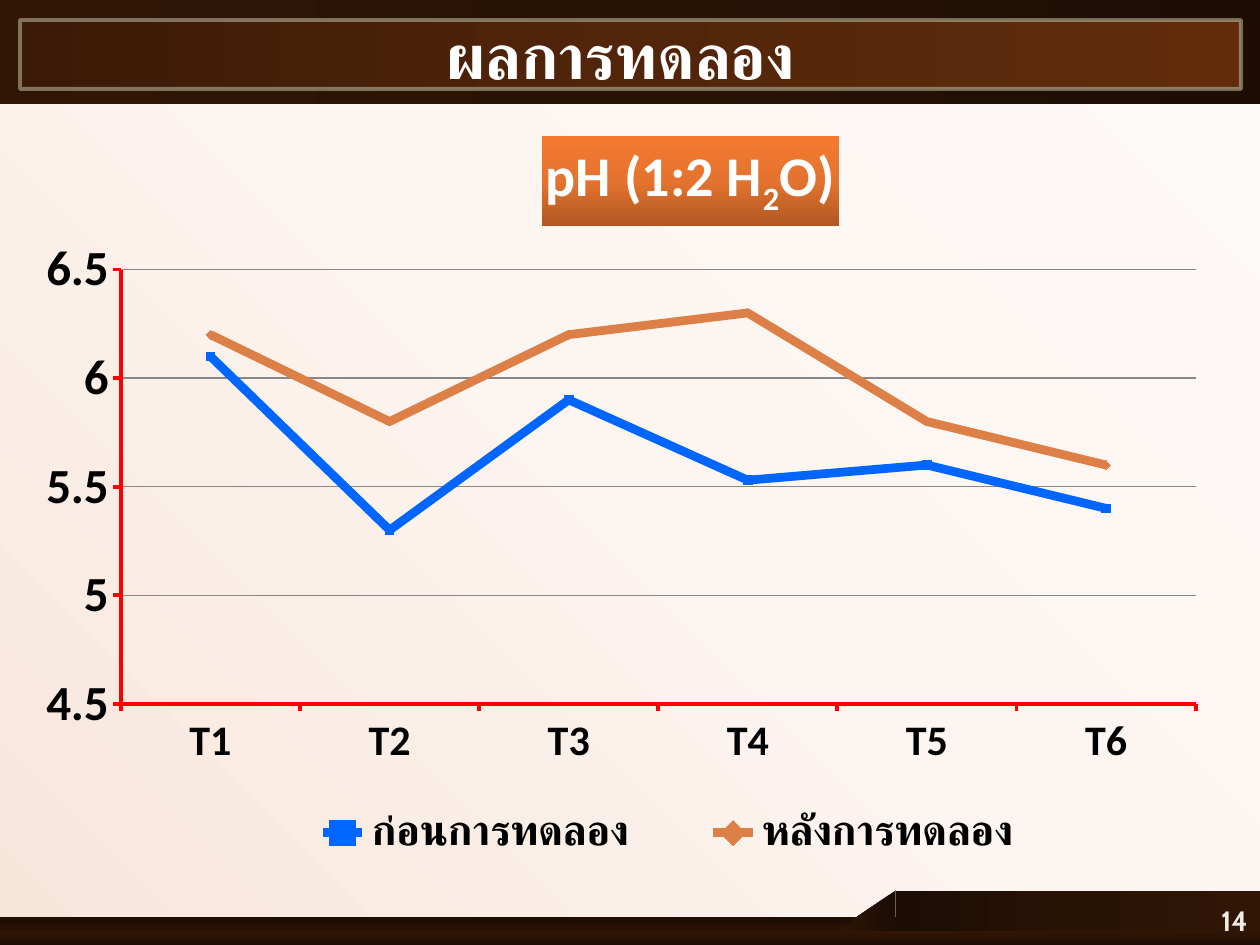
"""Builds the pH results slide with its line chart."""
from dataclasses import dataclass
from typing import Optional

from lxml.etree import SubElement
from pptx import Presentation
from pptx.chart.data import CategoryChartData
from pptx.dml.color import RGBColor
from pptx.enum.chart import XL_CHART_TYPE, XL_LEGEND_POSITION, XL_MARKER_STYLE, XL_TICK_MARK
from pptx.enum.shapes import MSO_SHAPE
from pptx.enum.text import MSO_ANCHOR, MSO_AUTO_SIZE, PP_ALIGN
from pptx.oxml.ns import qn
from pptx.util import Emu, Pt

COLORS = {
    "white": "FFFFFF", "black": "000000", "number": "EDEEE6", "frame": "C9CDB3",
    "axis": "FF0000", "grid": "878787", "before": "0066FF", "after": "DD8047",
    "after_marker": "FF6600",
}
GRADIENTS = {
    "background": ("FEFAF8", "FCF5F0", "F8E5DA"),
    "dark": ("1D0D03", "291305", "311606"),
    "brown": ("3A1A07", "52250A", "622C0B"),
    "heading": ("F47A2F", "E4732F", "B05822"),
}


@dataclass(frozen=True)
class Band:
    box: tuple[int, int, int, int]
    angle: int
    preset: MSO_SHAPE = MSO_SHAPE.RECTANGLE
    rotation: int = 0
    gradient: str = "dark"
    framed: bool = False


@dataclass(frozen=True)
class Treatment:
    name: str
    values: tuple[float, ...]
    line: str
    marker: str
    symbol: XL_MARKER_STYLE


BANDS = (
    Band((0, 917, 896, 28), 90),
    Band((829, 878, 54, 79), 270, MSO_SHAPE.RIGHT_TRIANGLE, 270),
    Band((896, 891, 364, 48), 0),
    Band((0, 931, 1260, 14), 270),
    Band((0, 0, 1260, 104), 180),
    Band((20, 20, 1221, 69), 0, gradient="brown", framed=True),
)
TREATMENTS = (
    Treatment("ก่อนการทดลอง", (6.1, 5.3, 5.9, 5.53, 5.6, 5.4),
              "before", "before", XL_MARKER_STYLE.SQUARE),
    Treatment("หลังการทดลอง", (6.2, 5.8, 6.2, 6.3, 5.8, 5.6),
              "after", "after_marker", XL_MARKER_STYLE.DIAMOND),
)


def px(length: int) -> Emu:
    return Emu(round(length * 914400 / 126))


def rgb(name: str) -> RGBColor:
    return RGBColor.from_string(COLORS[name])


def style_font(font, size: int, color: str, name: str = "Calibri") -> None:
    font.size = Pt(size)
    font.bold = True
    font.name = name
    font.color.rgb = rgb(color)


def fill_gradient(fill, holder, name: str, angle: int) -> None:
    fill.gradient()
    fill.gradient_angle = (360 - angle) % 360
    stops = holder.find(".//" + qn("a:gsLst"))
    for stop in list(stops):
        stops.remove(stop)
    for position, color in zip((0, 50000, 100000), GRADIENTS[name]):
        stop = SubElement(stops, qn("a:gs"), pos=str(position))
        SubElement(stop, qn("a:srgbClr"), val=color)


def add_band(slide, band: Band) -> None:
    shape = slide.shapes.add_shape(band.preset, *map(px, band.box))
    shape.rotation = band.rotation
    shape.shadow.inherit = False
    fill_gradient(shape.fill, shape._element.spPr, band.gradient, band.angle)
    if band.framed:
        shape.line.color.rgb = rgb("frame")
        shape.line.width = Pt(2.25)
        tint = shape._element.spPr.find(qn("a:ln")).find(".//" + qn("a:srgbClr"))
        SubElement(tint, qn("a:alpha"), val="50000")
    else:
        shape.line.fill.background()


def place(holder, index: int, x: float, y: float,
          size: Optional[tuple[float, float]] = None, inner: bool = False) -> None:
    for old in holder.findall(qn("c:layout")):
        holder.remove(old)
    layout = holder.makeelement(qn("c:layout"))
    holder.insert(index, layout)
    manual = SubElement(layout, qn("c:manualLayout"))
    settings = {"layoutTarget": "inner"} if inner else {}
    settings |= {"xMode": "edge", "yMode": "edge", "x": x, "y": y}
    if size:
        settings |= {"w": size[0], "h": size[1]}
    for tag, value in settings.items():
        SubElement(manual, qn(f"c:{tag}"), val=str(value))


def style_axis(axis, size: int) -> None:
    style_font(axis.tick_labels.font, size, "black")
    axis.major_tick_mark = XL_TICK_MARK.OUTSIDE
    axis.minor_tick_mark = XL_TICK_MARK.NONE
    axis.format.line.color.rgb = rgb("axis")
    axis.format.line.width = Pt(2.25)


def add_heading(chart) -> None:
    chart.has_title = True
    heading = chart.chart_title
    paragraph = heading.text_frame.paragraphs[0]
    for text, baseline in (("pH (1:2 H", None), ("2", "-25000"), ("O)", None)):
        run = paragraph.add_run()
        run.text = text
        style_font(run.font, 32, "white")
        if baseline:
            run.font._element.set("baseline", baseline)
    fill_gradient(heading.format.fill, heading._element, "heading", 90)
    place(heading._element, 1, 0.43, 0.015)


def add_ph_chart(slide) -> None:
    data = CategoryChartData()
    data.categories = [f"T{number}" for number in range(1, 7)]
    for treatment in TREATMENTS:
        data.add_series(treatment.name, treatment.values)
    chart = slide.shapes.add_chart(
        XL_CHART_TYPE.LINE_MARKERS, px(0), px(125), px(1260), px(753), data).chart
    chart.font.size = Pt(10)
    chart.font.name = "Calibri"
    add_heading(chart)

    style_axis(chart.category_axis, 24)
    value_axis = chart.value_axis
    style_axis(value_axis, 28)
    value_axis.minimum_scale, value_axis.maximum_scale = 4.5, 6.5
    value_axis.major_unit = 0.5
    value_axis.has_major_gridlines = True
    value_axis.major_gridlines.format.line.color.rgb = rgb("grid")
    value_axis.major_gridlines.format.line.width = Pt(0.75)

    plot = chart.plots[0]
    plot.vary_by_categories = False
    for series, treatment in zip(plot.series, TREATMENTS):
        series.smooth = False
        series.format.line.color.rgb = rgb(treatment.line)
        series.format.line.width = Pt(5)
        series.marker.style = treatment.symbol
        series.marker.size = 5
        series.marker.format.fill.solid()
        series.marker.format.fill.fore_color.rgb = rgb(treatment.marker)
        series.marker.format.line.color.rgb = rgb(treatment.marker)

    chart.has_legend = True
    chart.legend.position = XL_LEGEND_POSITION.BOTTOM
    chart.legend.include_in_layout = False
    style_font(chart.legend.font, 24, "black")
    place(chart.legend._element, 1, 0.2, 0.89, (0.66, 0.1))
    plot_area = chart._chartSpace.find(".//" + qn("c:plotArea"))
    place(plot_area, 0, 0.096, 0.192, (0.853, 0.577), inner=True)


def write_text(shape, text: str, align: PP_ALIGN, size: int, color: str, font: str) -> None:
    frame = shape.text_frame
    frame.text = text
    frame.word_wrap = True
    paragraph = frame.paragraphs[0]
    paragraph.alignment = align
    style_font(paragraph.runs[0].font, size, color, font)


def main() -> None:
    deck = Presentation()
    deck.slide_width, deck.slide_height = px(1260), px(945)
    slide = deck.slides.add_slide(deck.slide_layouts[5])
    fill_gradient(slide.background.fill, slide._element, "background", 135)
    for band in BANDS:
        add_band(slide, band)

    title = slide.shapes.title
    slide.shapes._spTree.append(title._element)
    title.left, title.top, title.width, title.height = map(px, (15, 10, 1211, 89))
    write_text(title, "ผลการทดลอง", PP_ALIGN.CENTER, 36, "white", "Calibri")
    title.text_frame.vertical_anchor = MSO_ANCHOR.TOP
    title.text_frame.auto_size = MSO_AUTO_SIZE.SHAPE_TO_FIT_TEXT

    number = slide.shapes.add_textbox(*map(px, (1162, 895, 98, 50)))
    write_text(number, "14", PP_ALIGN.RIGHT, 16, "number", "Cabin")
    number.text_frame.vertical_anchor = MSO_ANCHOR.MIDDLE
    add_ph_chart(slide)
    deck.save("out.pptx")


if __name__ == "__main__":
    main()
